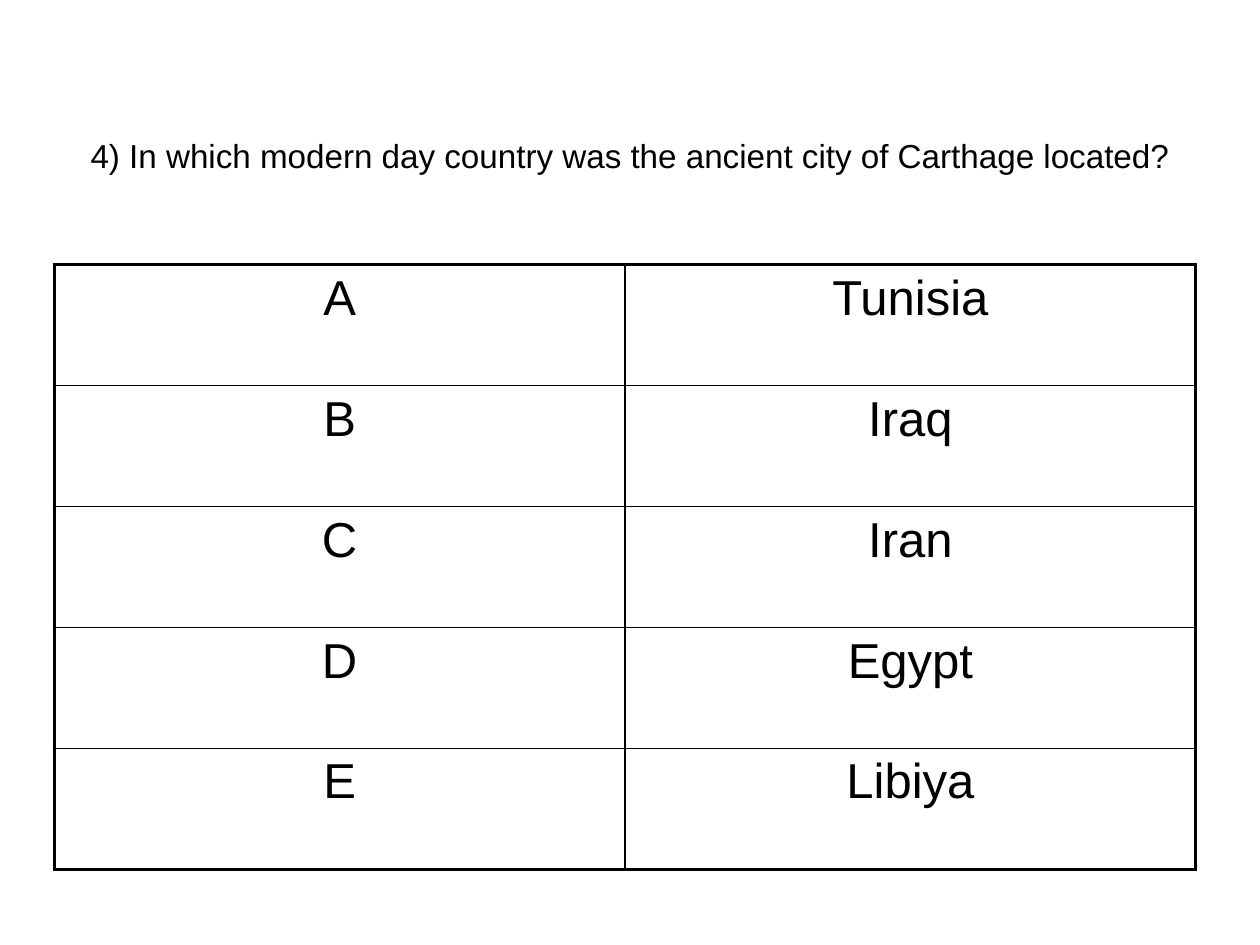
"""Build a quiz slide with one question and a bordered table of answers."""
from lxml import etree
from pptx import Presentation
from pptx.dml.color import RGBColor
from pptx.enum import text
from pptx.oxml.ns import qn
from pptx.util import Pt

QUESTION = "4) In which modern day country was the ancient city of Carthage located?"
ANSWERS = [("A", "Tunisia"), ("B", "Iraq"), ("C", "Iran"), ("D", "Egypt"), ("E", "Libiya")]

INK = "000000"
QUESTION_BOX = (36, 21.6, 648, 134.6)
ANSWERS_BOX = (31, 151.2, 652.3, 345.6)
OUTER, INNER = 2.25, 1


def color(value):
    return RGBColor.from_string(value)


def write(frame, wording, size):
    paragraph = frame.paragraphs[0]
    paragraph.alignment = text.PP_ALIGN.CENTER
    run = paragraph.add_run()
    run.text = wording
    for name, value in {"name": "Arial", "size": Pt(size), "bold": False}.items():
        setattr(run.font, name, value)
    run.font.color.rgb = color(INK)


def add_borders(cell, widths):
    properties = cell._tc.get_or_add_tcPr()
    for position, (side, width) in enumerate(widths.items()):
        line = etree.Element(qn(f"a:ln{side}"), w=str(Pt(width)))
        fill = etree.SubElement(line, qn("a:solidFill"))
        etree.SubElement(fill, qn("a:srgbClr"), val=INK)
        properties.insert(position, line)


def add_question(slide):
    title = slide.shapes.title
    for name, value in zip(("left", "top", "width", "height"), QUESTION_BOX):
        setattr(title, name, Pt(value))
    frame = title.text_frame
    frame.word_wrap = True
    frame.auto_size = text.MSO_AUTO_SIZE.NONE
    frame.vertical_anchor = text.MSO_ANCHOR.MIDDLE
    write(frame, QUESTION, 19)


def add_answers(slide):
    rows, columns = len(ANSWERS), len(ANSWERS[0])
    table = slide.shapes.add_table(rows, columns, *map(Pt, ANSWERS_BOX)).table
    table.first_row = table.horz_banding = False
    for r, answer in enumerate(ANSWERS):
        for c, wording in enumerate(answer):
            cell = table.cell(r, c)
            cell.fill.background()
            write(cell.text_frame, wording, 28)
            on_edge = {"L": c == 0, "R": c == columns - 1, "T": r == 0, "B": r == rows - 1}
            add_borders(cell, {side: OUTER if edge else INNER for side, edge in on_edge.items()})


def main():
    deck = Presentation()
    deck.slide_width, deck.slide_height = Pt(720), Pt(540)
    slide = deck.slides.add_slide(deck.slide_layouts[5])
    add_question(slide)
    add_answers(slide)
    deck.save("out.pptx")


if __name__ == "__main__":
    main()
